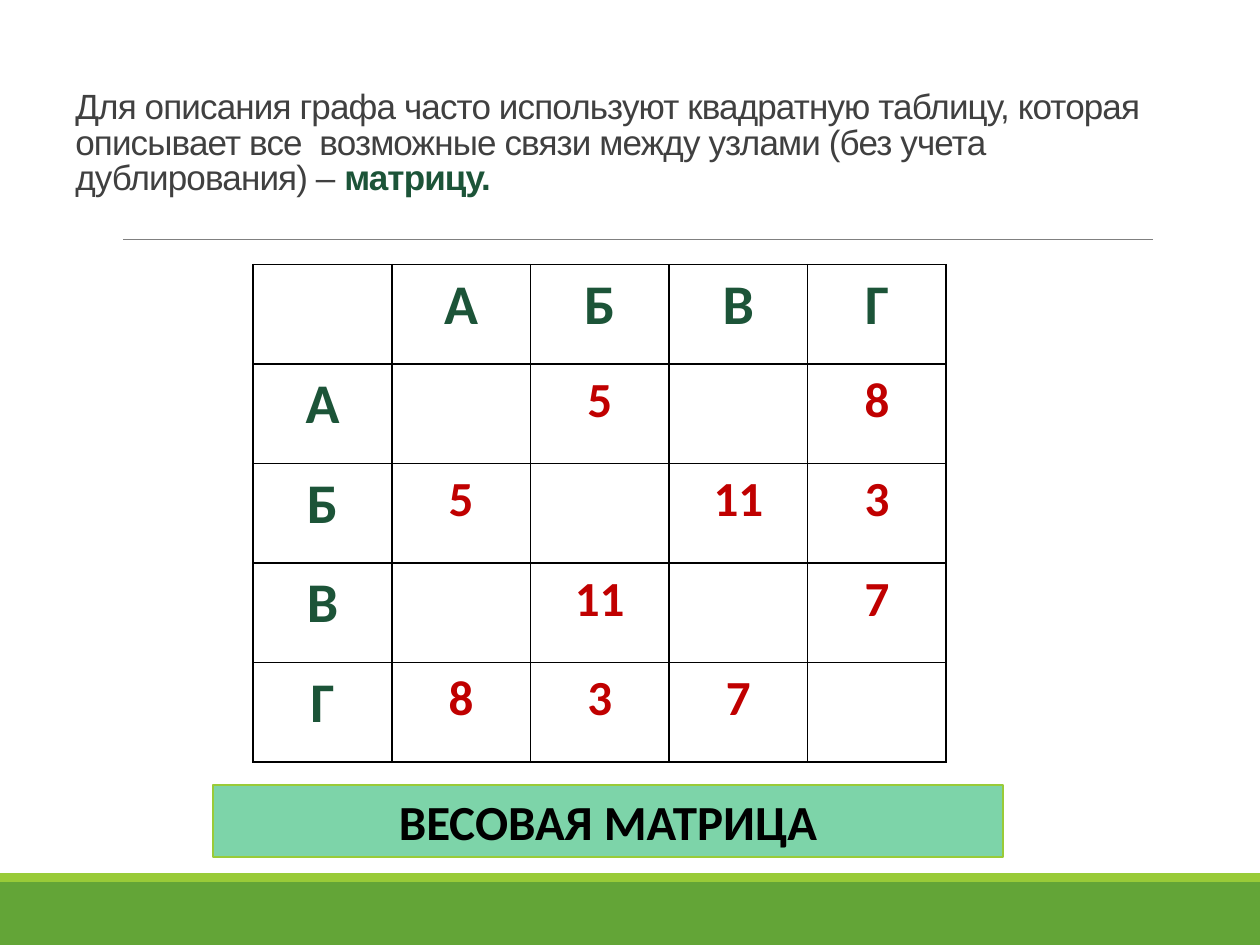
from lxml.etree import SubElement
from pptx import Presentation
from pptx.dml.color import RGBColor
from pptx.enum.shapes import MSO_CONNECTOR, MSO_SHAPE
from pptx.enum.text import MSO_ANCHOR, PP_ALIGN
from pptx.oxml import parse_xml
from pptx.oxml.ns import nsdecls, qn
from pptx.util import Inches, Pt

GREEN = RGBColor(0x63, 0xA5, 0x37)
LIME = RGBColor(0x99, 0xCB, 0x38)
MINT = RGBColor(0x7D, 0xD4, 0xA9)
DARK_GREEN = RGBColor(0x1C, 0x54, 0x38)
RED = RGBColor(0xC0, 0x00, 0x00)
TEXT_GRAY = RGBColor(0x40, 0x40, 0x40)
LINE_GRAY = RGBColor(0x80, 0x80, 0x80)
BLACK = RGBColor(0x00, 0x00, 0x00)
WHITE = RGBColor(0xFF, 0xFF, 0xFF)

TITLE = {"name": "Arial", "size": Pt(20), "bold": False}
NODE = {"name": "Calibri", "size": Pt(32), "bold": True}
WEIGHT = {"name": "Calibri", "size": Pt(28), "bold": True}

# Graph: nodes and weighted edges
NODES = "АБВГ"
EDGES = {"АБ": 5, "АГ": 8, "БВ": 11, "БГ": 3, "ВГ": 7}


def add_run(p, text, style, color):
    r = p.add_run()
    r.text = text
    for name, value in style.items():
        setattr(r.font, name, value)
    r.font.color.rgb = color
    return r


def add_rect(s, left, top, width, height, fill, line=None):
    sp = s.shapes.add_shape(MSO_SHAPE.RECTANGLE, Inches(left), Inches(top),
                            Inches(width), Inches(height))
    sp.shadow.inherit = False
    sp.fill.solid()
    sp.fill.fore_color.rgb = fill
    if line is None:
        sp.line.fill.background()
    else:
        sp.line.color.rgb = line
        sp.line.width = Pt(1)
    return sp


def add_rule(s, x1, x2, y):
    line = s.shapes.add_connector(MSO_CONNECTOR.STRAIGHT, Inches(x1), Inches(y),
                                  Inches(x2), Inches(y))
    line.line.color.rgb = LINE_GRAY
    line.line.width = Pt(0.5)
    SubElement(line._element.spPr, qn("a:effectLst"))


def add_title(s):
    tf = s.shapes.add_textbox(Inches(0.5), Inches(0.37), Inches(9), Inches(1.25)).text_frame
    tf.word_wrap = True
    tf.vertical_anchor = MSO_ANCHOR.BOTTOM
    p = tf.paragraphs[0]
    p.line_spacing = 0.85
    runs = [
        add_run(p, "Для описания графа часто используют квадратную таблицу, которая "
                   "описывает все  возможные связи между узлами (без учета "
                   "дублирования) – ", TITLE, TEXT_GRAY),
        add_run(p, "матрицу.", {**TITLE, "bold": True}, DARK_GREEN),
    ]
    for r in runs:
        r.font._element.set("spc", "-50")


def format_cell(cell):
    cell.fill.solid()
    cell.fill.fore_color.rgb = WHITE
    tcPr = cell._tc.get_or_add_tcPr()
    for i, side in enumerate(("lnL", "lnR", "lnT", "lnB")):
        tcPr.insert(i, parse_xml(
            f'<a:{side} {nsdecls("a")} w="12700"><a:solidFill>'
            f'<a:srgbClr val="{BLACK}"/></a:solidFill></a:{side}>'))


def add_matrix(s, left, top, cell_width, cell_height):
    n = len(NODES) + 1
    table = s.shapes.add_table(n, n, Inches(left), Inches(top), Inches(n * cell_width),
                               Inches(n * cell_height)).table
    for col in table.columns:
        col.width = Inches(cell_width)
    for row in table.rows:
        row.height = Inches(cell_height)
    labels = ["", *NODES]
    for i, row_node in enumerate(labels):
        for j, col_node in enumerate(labels):
            cell = table.cell(i, j)
            format_cell(cell)
            is_header = i == 0 or j == 0
            # The matrix is symmetric: each edge fills two cells
            edge = "".join(sorted(row_node + col_node))
            text = edge if is_header else str(EDGES.get(edge, ""))
            if text:
                p = cell.text_frame.paragraphs[0]
                p.alignment = PP_ALIGN.CENTER
                add_run(p, text, NODE if is_header else WEIGHT,
                        DARK_GREEN if is_header else RED)


def add_caption(s, text):
    sp = add_rect(s, 1.69, 6.23, 6.27, 0.57, MINT, LIME)
    tf = sp.text_frame
    tf.word_wrap = True
    tf.vertical_anchor = MSO_ANCHOR.TOP
    p = tf.paragraphs[0]
    p.alignment = PP_ALIGN.CENTER
    add_run(p, text, WEIGHT, BLACK)


def main():
    prs = Presentation()
    prs.slide_width, prs.slide_height = Inches(10), Inches(7.5)
    s = prs.slides.add_slide(prs.slide_layouts[6])

    # Footer bands and title rule
    add_rect(s, 0, 7, 10, 0.5, GREEN)
    add_rect(s, 0, 6.93, 10, 0.07, LIME)
    add_rule(s, 0.98, 9.15, 1.9)

    # Content
    add_title(s)
    add_matrix(s, 2.01, 2.1, 1.1, 0.79)
    add_caption(s, "ВЕСОВАЯ МАТРИЦА")

    prs.save("out.pptx")


if __name__ == "__main__":
    main()
